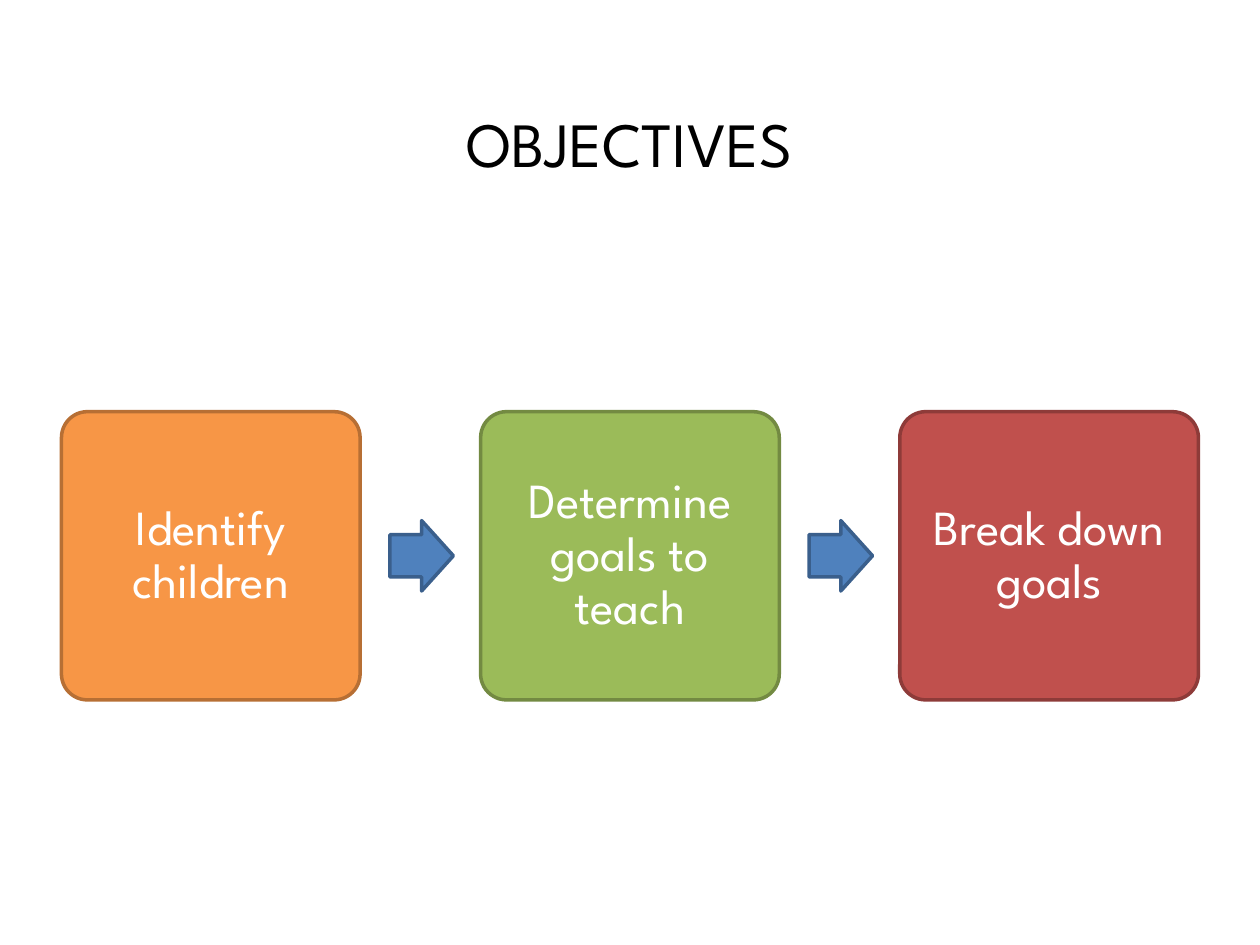
from dataclasses import dataclass

from pptx import Presentation
from pptx.dml.color import RGBColor
from pptx.enum.shapes import MSO_SHAPE
from pptx.enum.text import MSO_ANCHOR, PP_ALIGN
from pptx.shapes.autoshape import Shape
from pptx.slide import Slide
from pptx.text.text import TextFrame
from pptx.util import Cm, Pt

ROUNDED = MSO_SHAPE.ROUNDED_RECTANGLE
ARROW = MSO_SHAPE.RIGHT_ARROW
MIDDLE = MSO_ANCHOR.MIDDLE
CENTER = PP_ALIGN.CENTER

FONT = "League Spartan"
COLORS = {
    "black": "000000",
    "white": "FFFFFF",
    "orange": "F79646",
    "orange_line": "B76F34",
    "green": "9BBB59",
    "green_line": "738A42",
    "red": "C0504D",
    "red_line": "8E3B39",
    "blue": "4F81BD",
    "blue_line": "3A5F8C",
}

LEFT, TOP = 1.24, 8.3
BOX_W, BOX_H = 6.02, 5.81
PITCH = 8.45
ARROW_W, ARROW_H = 1.28, 1.42
ARROW_OFFSET = 6.62
INSET = Cm(0.41)


@dataclass
class Step:
    text: str
    color: str


STEPS = [
    Step("Identify children", "orange"),
    Step("Determine goals to teach", "green"),
    Step("Break down goals", "red"),
]


def rgb(name: str) -> RGBColor:
    return RGBColor.from_string(COLORS[name])


def set_text(tf: TextFrame, text: str, size: int, color: str) -> None:
    tf.word_wrap = True
    tf.vertical_anchor = MIDDLE
    tf.text = text
    p = tf.paragraphs[0]
    p.alignment = CENTER
    r = p.runs[0]
    r.font.name = FONT
    r.font.size = Pt(size)
    r.font.color.rgb = rgb(color)


def add_block(s: Slide, kind: MSO_SHAPE, x: float, y: float,
              w: float, h: float, color: str) -> Shape:
    sp = s.shapes.add_shape(kind, Cm(x), Cm(y), Cm(w), Cm(h))
    sp.shadow.inherit = False
    sp.fill.solid()
    sp.fill.fore_color.rgb = rgb(color)
    sp.line.color.rgb = rgb(f"{color}_line")
    sp.line.width = Pt(2)
    return sp


def add_step(s: Slide, step: Step, x: float) -> None:
    sp = add_block(s, ROUNDED, x, TOP, BOX_W, BOX_H, step.color)
    sp.adjustments[0] = 0.09
    tf = sp.text_frame
    tf.margin_left = tf.margin_right = INSET
    tf.margin_top = tf.margin_bottom = INSET
    set_text(tf, step.text, 28, "white")
    tf.paragraphs[0].line_spacing = 0.9


def add_arrow(s: Slide, x: float) -> None:
    y = TOP + (BOX_H - ARROW_H) / 2
    sp = add_block(s, ARROW, x, y, ARROW_W, ARROW_H, "blue")
    sp.adjustments[0] = 0.6
    sp.adjustments[1] = 0.5


def main() -> None:
    prs = Presentation()
    prs.slide_width, prs.slide_height = Cm(25.4), Cm(19.05)
    s = prs.slides.add_slide(prs.slide_layouts[6])
    title = s.shapes.add_textbox(Cm(0.91), Cm(1.27), Cm(23.55), Cm(3.18))
    set_text(title.text_frame, "OBJECTIVES", 36, "black")
    for i, step in enumerate(STEPS):
        x = LEFT + i * PITCH
        add_step(s, step, x)
        if i < len(STEPS) - 1:
            add_arrow(s, x + ARROW_OFFSET)
    prs.save("out.pptx")


if __name__ == "__main__":
    main()
